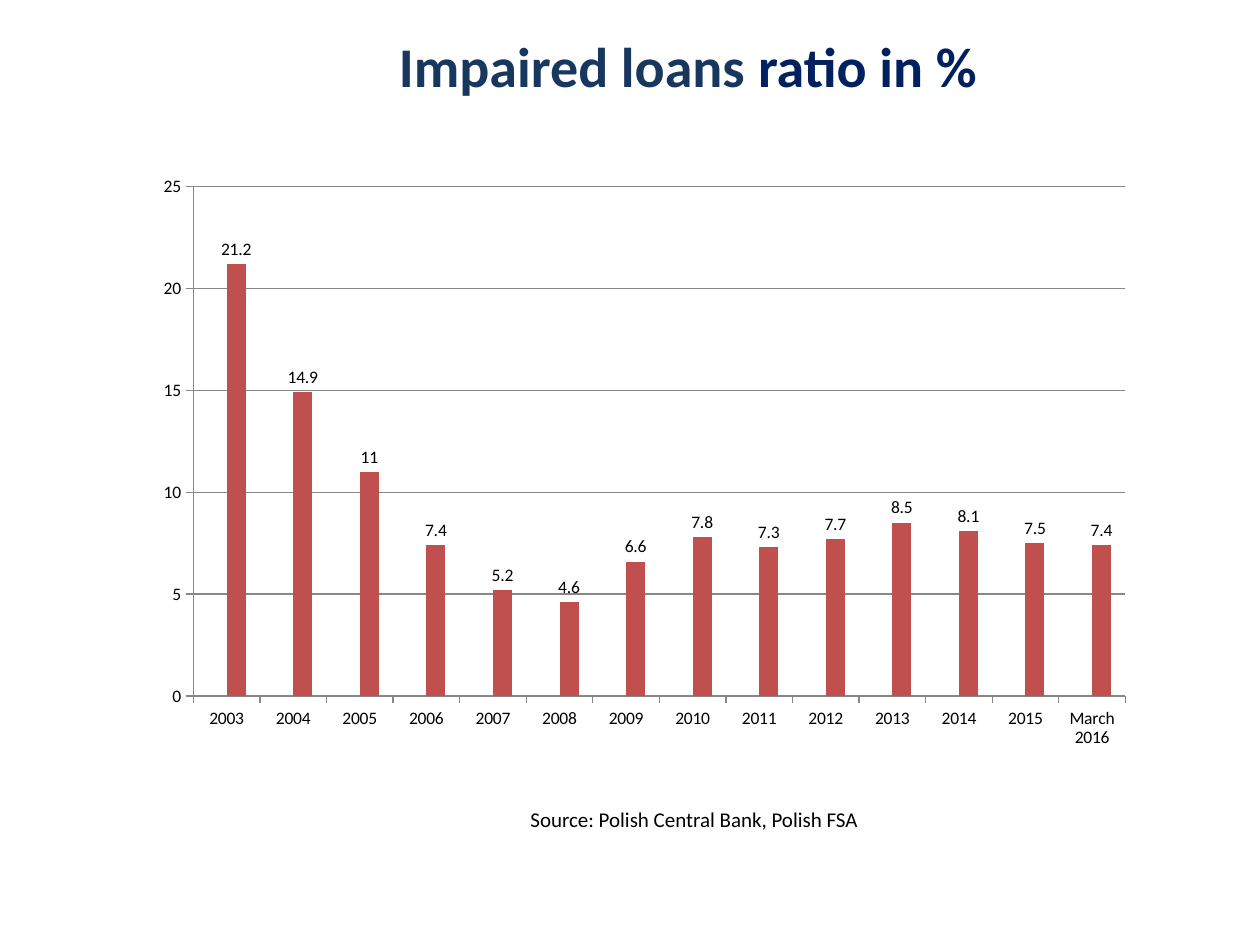
"""Build a slide with a column chart of the impaired loans ratio."""
from dataclasses import dataclass

from pptx import Presentation
from pptx.chart.data import CategoryChartData as Data
from pptx.dml.color import RGBColor as Rgb
from pptx.enum.chart import XL_CHART_TYPE as Kind, XL_LABEL_POSITION as Spot, XL_TICK_MARK as Tick
from pptx.enum.text import MSO_ANCHOR as Anchor, PP_ALIGN as Align
from pptx.util import Inches, Pt


@dataclass(frozen=True)
class Theme:
    font: str = "Calibri"
    navy: str = "17375E"
    deep: str = "002060"
    ink: str = "000000"
    rule: str = "878787"
    blue: str = "4F81BD"
    red: str = "C0504D"
    head: int = 32
    note: int = 12
    label: int = 10


@dataclass(frozen=True)
class Piece:
    text: str
    color: str


@dataclass(frozen=True)
class Line:
    top: float
    height: float
    size: int
    pieces: tuple[Piece, ...]
    bold: bool = False


THEME = Theme()
LINES = (
    Line(0, 1.04, THEME.head,
         (Piece("Impaired loans ", THEME.navy), Piece("ratio in % ", THEME.deep)), True),
    Line(6.35, 0.3, THEME.note, (Piece("Source: Polish Central Bank, Polish FSA", THEME.ink),)),
)
YEARS = [str(year) for year in range(2003, 2016)] + ["March 2016"]
RATIOS = (21.2, 14.9, 11, 7.4, 5.2, 4.6, 6.6, 7.8, 7.3, 7.7, 8.5, 8.1, 7.5, 7.4)


def style(font, size: int, color: str, bold: bool = False) -> None:
    font.name, font.size, font.bold = THEME.font, Pt(size), bold
    font.color.rgb = Rgb.from_string(color)


def draw_line(slide, line: Line) -> None:
    box = slide.shapes.add_textbox(
        Inches(1.02), Inches(line.top), Inches(8.98), Inches(line.height))
    frame = box.text_frame
    frame.word_wrap = True
    frame.vertical_anchor = Anchor.MIDDLE
    para = frame.paragraphs[0]
    para.alignment = Align.CENTER
    for piece in line.pieces:
        run = para.add_run()
        run.text = piece.text
        style(run.font, line.size, piece.color, line.bold)


def draw_chart(slide) -> None:
    data = Data(number_format="General")
    data.categories = YEARS
    data.add_series("Series 1", [None] * len(YEARS))
    data.add_series("Series 2", RATIOS)
    chart = slide.shapes.add_chart(
        Kind.COLUMN_CLUSTERED, Inches(1.14), Inches(1.31), Inches(7.95), Inches(4.72), data).chart
    chart.has_legend = chart.has_title = False
    style(chart.font, THEME.label, THEME.ink)
    rule = Rgb.from_string(THEME.rule)
    scale = chart.value_axis
    scale.minimum_scale, scale.maximum_scale, scale.major_unit = 0, 25, 5
    scale.has_major_gridlines = True
    for axis in (scale, chart.category_axis):
        axis.major_tick_mark = Tick.OUTSIDE
        axis.format.line.color.rgb = rule
    scale.major_gridlines.format.line.color.rgb = rule
    plot = chart.plots[0]
    plot.gap_width, plot.overlap, plot.vary_by_categories = 150, 0, False
    for series, color in zip(plot.series, (THEME.blue, THEME.red)):
        series.format.fill.solid()
        series.format.fill.fore_color.rgb = Rgb.from_string(color)
    labels = plot.series[1].data_labels
    labels.show_value = True
    labels.position = Spot.OUTSIDE_END
    style(labels.font, THEME.label, THEME.ink)


def main() -> None:
    deck = Presentation()
    deck.slide_width, deck.slide_height = Inches(10), Inches(7.5)
    slide = deck.slides.add_slide(deck.slide_layouts[6])
    for line in LINES:
        draw_line(slide, line)
    draw_chart(slide)
    deck.save("out.pptx")


if __name__ == "__main__":
    main()
